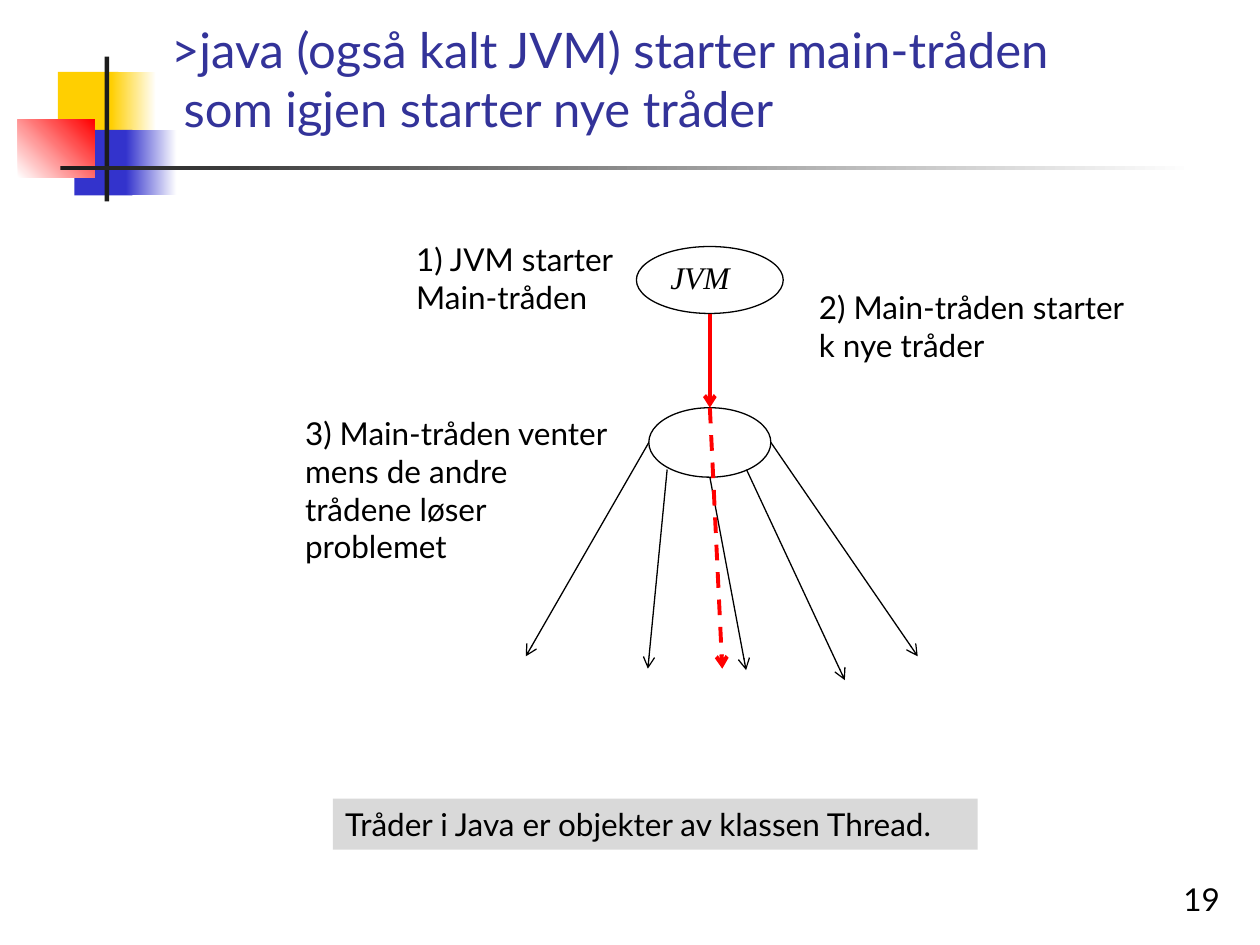
from pptx import Presentation
from pptx.dml.color import RGBColor
from pptx.enum.dml import MSO_LINE_DASH_STYLE as DASH
from pptx.enum.shapes import MSO_CONNECTOR as CONN, MSO_SHAPE as SHAPE
from pptx.enum.text import MSO_ANCHOR as ANCHOR, PP_ALIGN as ALIGN
from pptx.oxml.ns import qn
from pptx.util import Cm, Pt
from lxml.etree import SubElement

BODY = {"name": "Lato", "size": Pt(18)}


def rgb(value):
    """Turn a hex string into a colour."""
    return RGBColor.from_string(value)


def write(sp, paragraphs, color="000000", anchor=ANCHOR.TOP, align=ALIGN.LEFT,
          wrap=True, spacing=None, **style):
    """Fill a shape with left-to-right formatted paragraphs."""
    tf = sp.text_frame
    tf.word_wrap, tf.vertical_anchor = wrap, anchor
    for i, text in enumerate(paragraphs):
        p = tf.paragraphs[0] if i == 0 else tf.add_paragraph()
        p.text, p.alignment, p.line_spacing = text, align, spacing
        for r in p.runs:
            r.font.color.rgb = rgb(color)
            for key, value in {**BODY, **style}.items():
                setattr(r.font, key, value)


def add_text(s, box, paragraphs, **options):
    """Add a text box."""
    write(s.shapes.add_textbox(*map(Cm, box)), paragraphs, **options)


def add_block(s, box, start, end=None, angle=0):
    """Add a rectangle with a solid or two-colour gradient fill."""
    sp = s.shapes.add_shape(SHAPE.RECTANGLE, *map(Cm, box))
    sp.shadow.inherit = False
    sp.line.fill.background()
    if end is None:
        sp.fill.solid()
        sp.fill.fore_color.rgb = rgb(start)
    else:
        sp.fill.gradient()
        sp.fill.gradient_angle = angle
        for stop, color, place in zip(sp.fill.gradient_stops, (start, end), (0, 1)):
            stop.color.rgb, stop.position = rgb(color), place
    return sp


def add_ellipse(s, box):
    """Add an unfilled ellipse with a thin black outline."""
    sp = s.shapes.add_shape(SHAPE.OVAL, *map(Cm, box))
    sp.shadow.inherit = False
    sp.fill.background()
    sp.line.color.rgb, sp.line.width = rgb("000000"), Pt(0.75)
    return sp


def add_arrow(s, start, end, color="000000", width=0.75, dash=None):
    """Add a straight line with an open arrowhead at its end."""
    c = s.shapes.add_connector(CONN.STRAIGHT, *map(Cm, (*start, *end)))
    c.line.color.rgb, c.line.width = rgb(color), Pt(width)
    if dash:
        c.line.dash_style = dash
    SubElement(c.line._get_or_add_ln(), qn("a:tailEnd"), type="arrow")
    SubElement(c._element.spPr, qn("a:effectLst"))


def add_ornament(s, x, y):
    """Place the coloured squares and the crossing rules."""
    blocks = [
        ((0.81, 0.31, 1.22, 1.32), "FFCF01"),
        ((1.88, 0.31, 0.91, 1.32), "FFCF01", "FFFFFF"),
        ((1.14, 1.48, 1.17, 1.32), "3333CC"),
        ((2.18, 1.48, 1.02, 1.32), "3333CC", "FFFFFF"),
        ((0, 1.27, 1.55, 1.17), "FFFFFF", "FF0000", 45),
        ((1.75, 0, 0.09, 2.92), "1C1C1C"),
        ((0.86, 2.21, 22.86, 0.08), "1C1C1C", "FFFFFF"),
    ]
    for (dx, dy, w, h), *fill in blocks:
        add_block(s, (x + dx, y + dy, w, h), *fill)


def add_thread_diagram(s, x, y):
    """Place the JVM, the main thread, its new threads and the step labels."""
    jvm_w, jvm_h, main_w, main_h = 2.96, 1.35, 2.46, 1.4
    mid, jvm_top, main_top = x + 8.41, y + 0.25, y + 3.5
    main_left = mid - main_w / 2

    jvm = add_ellipse(s, (mid - jvm_w / 2, jvm_top, jvm_w, jvm_h))
    write(jvm, ["JVM"], spacing=0.9, name="Times New Roman", italic=True)
    red = {"color": "FF0000", "width": 2.25}
    add_arrow(s, (mid, jvm_top + jvm_h), (mid, main_top), **red)
    add_ellipse(s, (main_left, main_top, main_w, main_h))

    threads = [(0, 0.5, 4.7, 8.51), (0.15, 0.89, 7.16, 8.76), (0.5, 1, 9.14, 8.79),
               (0.8, 0.89, 11.13, 8.99), (1, 0.5, 12.6, 8.51)]
    for fx, fy, dx, dy in threads:
        add_arrow(s, (main_left + fx * main_w, main_top + fy * main_h), (x + dx, y + dy))
    add_arrow(s, (mid, main_top), (x + 8.66, y + 8.76), dash=DASH.DASH, **red)

    labels = [
        ((2.24, 0, 4.7, 1.8), ["1) JVM starter \vMain-tråden"]),
        ((0, 3.5, 6.7, 3.33),
         ["3) Main-tråden venter\vmens de andre \vtrådene løser\vproblemet"]),
        ((10.36, 0.97, 6.76, 1.8), ["2) Main-tråden starter", "k nye tråder"]),
    ]
    for (dx, dy, w, h), paragraphs in labels:
        add_text(s, (x + dx, y + dy, w, h), paragraphs, wrap=False)


def main():
    """Build the slide and save it."""
    prs = Presentation()
    prs.slide_width, prs.slide_height = Cm(25.4), Cm(19.05)
    s = prs.slides.add_slide(prs.slide_layouts[6])
    add_ornament(s, 0.36, 1.14)
    add_text(s, (3.2, 0.58, 21.64, 2.31),
             [">java (også kalt JVM) starter main-tråden\v som igjen starter nye tråder"],
             color="333399", anchor=ANCHOR.BOTTOM, size=Pt(28))
    add_thread_diagram(s, 5.9, 4.72)
    note = add_block(s, (6.71, 16.1, 13, 1.03), "D9D9D9")
    write(note, ["Tråder i Java er objekter av klassen Thread."])
    add_text(s, (19.56, 17.35, 5.28, 1.27), ["19"],
             anchor=ANCHOR.BOTTOM, align=ALIGN.RIGHT)
    prs.save("out.pptx")


if __name__ == "__main__":
    main()
